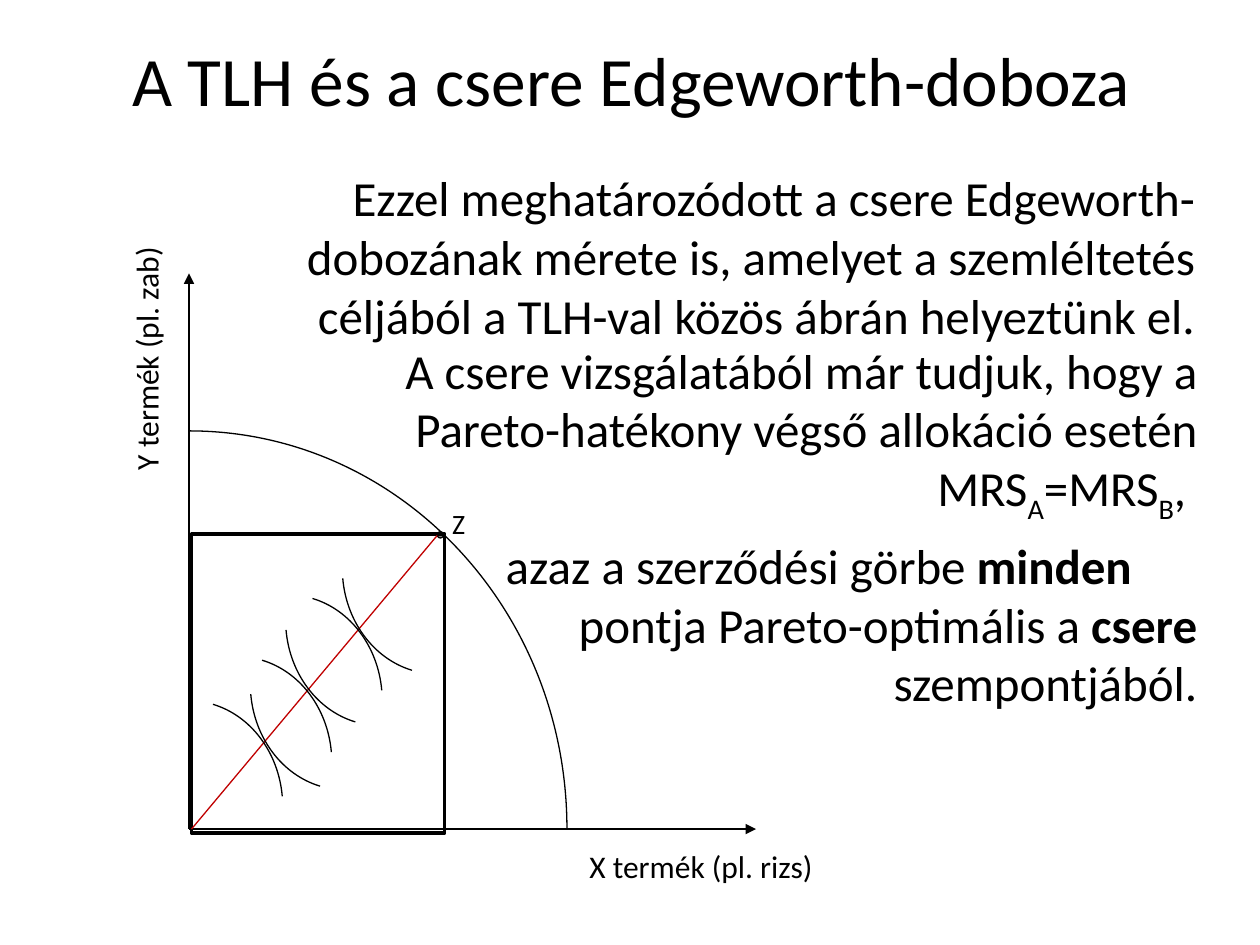
from lxml.etree import SubElement
from pptx import Presentation
from pptx.dml.color import RGBColor
from pptx.enum.shapes import MSO_CONNECTOR, MSO_SHAPE
from pptx.enum.text import MSO_ANCHOR, PP_ALIGN
from pptx.oxml.ns import qn
from pptx.util import Inches, Pt

THEME = {
    "font": "Calibri", "ink": RGBColor(0, 0, 0), "accent": RGBColor(0xC0, 0, 0),
    "title": Pt(39.6), "body": Pt(28), "axis": Pt(18), "point": Pt(16),
    "thin": Pt(0.75), "thick": Pt(2),
}

# Content: a paragraph is a list of (text, style) runs
TITLE = "A TLH és a csere Edgeworth-doboza"
INTRO = [[("Ezzel meghatározódott a csere Edgeworth-dobozának mérete is, amelyet "
           "a szemléltetés céljából a TLH-val közös ábrán helyeztünk el.", "")]]
CONDITION = [
    [("A csere vizsgálatából már tudjuk, hogy a Pareto-hatékony végső "
      "allokáció esetén MRS", ""), ("A", "sub"), ("=MRS", ""), ("B", "sub"), (", ", "")],
    [("azaz a szerződési görbe ", ""), ("minden", "bold")],
    [("pontja Pareto-optimális a ", ""), ("csere", "bold"), (" szempontjából.", "")],
]
CONDITION_SPACING = [(0, 0), (6, 0.52), (0, 0)]  # points before, right indent
LABELS = [  # text, box, size, rotation
    ("Y termék (pl. zab)", (0.12, 2.59, 2.08, 0.4), "axis", 270),
    ("Z", (3.49, 3.97, 0.42, 0.37), "point", 0),
    ("X termék (pl. rizs)", (4.58, 6.67, 3.25, 0.4), "axis", 0),
]

# Diagram geometry in inches
ORIGIN = (1.5, 6.58)
AXIS_ENDS = [(1.5, 2.17), (6, 6.58)]
FRONTIER = [(1.66, 0), (3, 1.41), (3, 3.16)]
FRONTIER_START = (1.5, 3.42)
INDIFFERENCE = [(0.3, 0.09), (0.52, 0.38), (0.55, 0.73)]
CURVE_STARTS = {  # direction: starting points
    -1: [(3.27, 5.32), (2.82, 5.73), (2.54, 6.24)],
    1: [(2.48, 4.75), (2.08, 5.24), (1.69, 5.59)],
}

presentation = Presentation()
presentation.slide_width, presentation.slide_height = Inches(10), Inches(7.5)
slide = presentation.slides.add_slide(presentation.slide_layouts[5])
shapes = slide.shapes


def inches(values):
    return [Inches(value) for value in values]


def write(frame, paragraphs, size, align=PP_ALIGN.LEFT):
    frame.word_wrap = True
    for index, runs in enumerate(paragraphs):
        paragraph = frame.paragraphs[0] if index == 0 else frame.add_paragraph()
        paragraph.alignment = align
        for text, style in runs:
            run = paragraph.add_run()
            run.text = text
            formats = {"name": THEME["font"], "size": THEME[size], "bold": style == "bold"}
            for name, value in formats.items():
                setattr(run.font, name, value)
            run.font.color.rgb = THEME["ink"]
            if style == "sub":
                run.font._element.set("baseline", "-25000")


def add_text(box, paragraphs, size, align=PP_ALIGN.LEFT, rotation=0):
    shape = shapes.add_textbox(*inches(box))
    shape.rotation = rotation
    write(shape.text_frame, paragraphs, size, align)
    return shape.text_frame


def outline(shape, width="thin"):
    shape.shadow.inherit = False
    shape.fill.background()
    shape.line.color.rgb, shape.line.width = THEME["ink"], THEME[width]


def add_line(start, end, color="ink", arrow=False):
    connector = shapes.add_connector(MSO_CONNECTOR.STRAIGHT, *inches(start + end))
    connector.line.color.rgb, connector.line.width = THEME[color], THEME["thin"]
    if arrow:
        SubElement(connector.line._get_or_add_ln(), qn("a:tailEnd"), type="triangle")
    SubElement(connector._element.spPr, qn("a:effectLst"))


def add_curve(start, offsets, direction=1):
    """Draw a cubic Bézier whose control points are offsets from its start."""
    points = [inches((start[0] + direction * x, start[1] + direction * y)) for x, y in offsets]
    builder = shapes.build_freeform(*inches(start))
    builder.add_line_segments(points, close=False)
    shape = builder.convert_to_shape()
    outline(shape)
    # Join the three straight segments into one cubic segment
    segments = list(shape._element.iter(qn("a:lnTo")))
    cubic = SubElement(segments[0].getparent(), qn("a:cubicBezTo"))
    for segment in segments:
        cubic.append(segment[0])
        segment.getparent().remove(segment)


# Title
title = shapes.title
title.left, title.top, title.width, title.height = inches((0.51, 0, 9, 1.25))
title.text_frame.vertical_anchor = MSO_ANCHOR.MIDDLE
write(title.text_frame, [[(TITLE, "")]], "title", PP_ALIGN.CENTER)

# Explanation
condition = add_text((2.81, 2.65, 6.79, 3.59), CONDITION, "body", PP_ALIGN.RIGHT)
for paragraph, (before, indent) in zip(condition.paragraphs, CONDITION_SPACING):
    paragraph.space_before = Pt(before)
    paragraph._p.get_or_add_pPr().set("marR", str(Inches(indent)))
add_text((1.86, 1.28, 7.72, 1.51), INTRO, "body", PP_ALIGN.RIGHT)

# Axes, frontier and labels
for axis_end in AXIS_ENDS:
    add_line(ORIGIN, axis_end, arrow=True)
add_curve(FRONTIER_START, FRONTIER)
for text, box, size, rotation in LABELS:
    add_text(box, [[(text, "")]], size, rotation=rotation)

# Point Z
point = shapes.add_shape(MSO_SHAPE.OVAL, *inches((3.47, 4.22, 0.05, 0.05)))
outline(point)
point.fill.solid()
point.fill.fore_color.rgb = THEME["ink"]
color = point._element.spPr.find(qn("a:solidFill")).find(qn("a:srgbClr"))
SubElement(color, qn("a:alpha"), val="50000")

# Edgeworth box with contract curve and indifference curves
outline(shapes.add_shape(MSO_SHAPE.RECTANGLE, *inches((1.52, 4.24, 2.01, 2.37))), "thick")
add_line((1.52, 6.58), (3.47, 4.25), "accent")
for direction, starts in CURVE_STARTS.items():
    for start in starts:
        add_curve(start, INDIFFERENCE, direction)

presentation.save("out.pptx")
